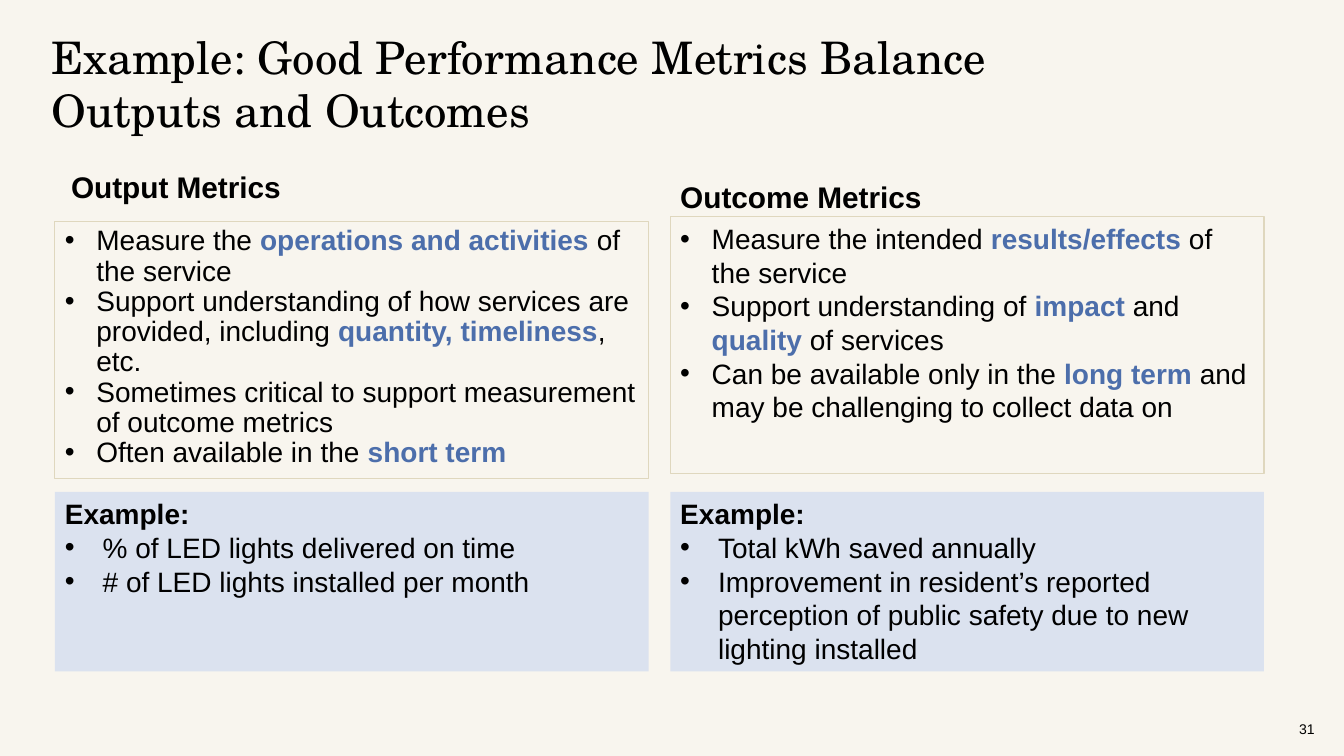
from lxml import etree
from pptx import Presentation
from pptx.dml.color import RGBColor
from pptx.enum.shapes import MSO_SHAPE
from pptx.enum.text import MSO_ANCHOR, PP_ALIGN
from pptx.oxml.ns import qn
from pptx.util import Pt

RECTANGLE = MSO_SHAPE.RECTANGLE
TOP, MIDDLE = MSO_ANCHOR.TOP, MSO_ANCHOR.MIDDLE
LEFT = PP_ALIGN.LEFT
BODY_FONT, TITLE_FONT = "Arial", "TeX Gyre Schola"
BLACK, ACCENT, BACKGROUND = "000000", "4C6EAB", "F8F5EE"
BORDER, EXAMPLE_FILL = "DFD7BE", "DBE2EF"
COLUMN_WIDTH, HEADING_HEIGHT, POINTS_HEIGHT = 424.08, 34.56, 183.6
EXAMPLE_TOP, EXAMPLE_HEIGHT = 351.36, 128.16

OUTPUT = {
    "heading": "Output Metrics",
    "points": [
        "Measure the *operations and activities *of the service",
        "Support understanding of how services are provided, including *quantity, timeliness*, etc.",
        "Sometimes critical to support measurement of outcome metrics",
        "Often available in the *short term*",
    ],
    "examples": ["% of LED lights delivered on time", "# of LED lights installed per month"],
}
OUTCOME = {
    "heading": "Outcome Metrics",
    "points": [
        "Measure the intended *results/effects *of the service",
        "Support understanding of *impact *and *quality* of services",
        "Can be available only in the *long term *and may be challenging to collect data on",
    ],
    "examples": [
        "Total kWh saved annually",
        "Improvement in resident’s reported perception of public safety due to new lighting installed",
    ],
}


def color(hex_string):
    """Turn a hex string into a colour."""
    return RGBColor.from_string(hex_string)


def add_bullet(paragraph, indent):
    """Give a paragraph a black bullet with a hanging indent in points."""
    properties = paragraph._p.get_or_add_pPr()
    properties.set("marL", str(Pt(indent)))
    properties.set("indent", str(-Pt(indent)))
    bullet_color = etree.SubElement(properties, qn("a:buClr"))
    etree.SubElement(bullet_color, qn("a:srgbClr"), val=BLACK)
    etree.SubElement(properties, qn("a:buFont"), typeface=BODY_FONT)
    etree.SubElement(properties, qn("a:buChar"), char="•")


def write(frame, text, size=20, font=BODY_FONT, bold=False, indent=0, spacing=None):
    """Add a paragraph in which starred passages are bold and accented."""
    paragraph = frame.paragraphs[0]
    if paragraph.runs:
        paragraph = frame.add_paragraph()
    if indent:
        add_bullet(paragraph, indent)
    paragraph.alignment = LEFT
    if spacing:
        paragraph.line_spacing = spacing
    for line_number, line in enumerate(text.split("\n")):
        if line_number:
            paragraph.add_line_break()
        for part_number, part in enumerate(line.split("*")):
            if not part:
                continue
            accented = part_number % 2 == 1
            run = paragraph.add_run()
            run.text = part
            run.font.size = Pt(size)
            run.font.name = font
            run.font.bold = bold or accented
            run.font.color.rgb = color(ACCENT if accented else BLACK)


def prepare_frame(shape, insets=(7.2, 3.6, 7.2, 3.6), anchor=TOP):
    """Set wrapping, insets and anchor, and return the text frame."""
    frame = shape.text_frame
    frame.word_wrap = True
    frame.vertical_anchor = anchor
    frame.margin_left, frame.margin_top, frame.margin_right, frame.margin_bottom = map(Pt, insets)
    return frame


def add_label(slide, box, text, insets=(7.2, 3.6, 7.2, 3.6), anchor=TOP, **text_format):
    """Place one paragraph of text in a box."""
    label = slide.shapes.add_textbox(*map(Pt, box))
    write(prepare_frame(label, insets, anchor), text, **text_format)


def add_panel(slide, box, fill=None, line=None):
    """Draw a rectangle and return its text frame."""
    panel = slide.shapes.add_shape(RECTANGLE, *map(Pt, box))
    panel.shadow.inherit = False
    if fill:
        panel.fill.solid()
        panel.fill.fore_color.rgb = color(fill)
    else:
        panel.fill.background()
    if line:
        panel.line.color.rgb = color(line)
        panel.line.width = Pt(0.75)
    else:
        panel.line.fill.background()
    return prepare_frame(panel)


def add_column(slide, left, heading_top, points_top, metrics, heading_insets, spacing=None):
    """Build a column of heading, key points and examples."""
    add_label(slide, (left, heading_top, COLUMN_WIDTH, HEADING_HEIGHT), metrics["heading"],
              insets=heading_insets, size=21.3, bold=True)
    points = add_panel(slide, (left, points_top, COLUMN_WIDTH, POINTS_HEIGHT), line=BORDER)
    for point in metrics["points"]:
        write(points, point, indent=22.5, spacing=spacing)
    examples = add_panel(slide, (left, EXAMPLE_TOP, COLUMN_WIDTH, EXAMPLE_HEIGHT), fill=EXAMPLE_FILL)
    write(examples, "Example:", bold=True)
    for example in metrics["examples"]:
        write(examples, example, indent=27)


def main():
    """Build and save the slide."""
    presentation = Presentation()
    presentation.slide_width, presentation.slide_height = Pt(960), Pt(540)
    slide = presentation.slides.add_slide(presentation.slide_layouts[6])
    slide.background.fill.solid()
    slide.background.fill.fore_color.rgb = color(BACKGROUND)
    add_label(slide, (29.52, 20.88, 864, 42.48),
              "Example: Good Performance Metrics Balance \nOutputs and Outcomes",
              insets=(7.2, 0, 7.2, 3.6), size=32, font=TITLE_FONT)
    add_column(slide, 39.24, 115.92, 158.4, OUTPUT, (11.5, 4.8, 9.6, 4.8), spacing=0.9)
    add_column(slide, 478.8, 123.84, 154.8, OUTCOME, (7.2, 3.6, 7.2, 3.6))
    add_label(slide, (920.88, 506.16, 36, 28.8), "31", anchor=MIDDLE, size=10)
    presentation.save("out.pptx")


if __name__ == "__main__":
    main()
